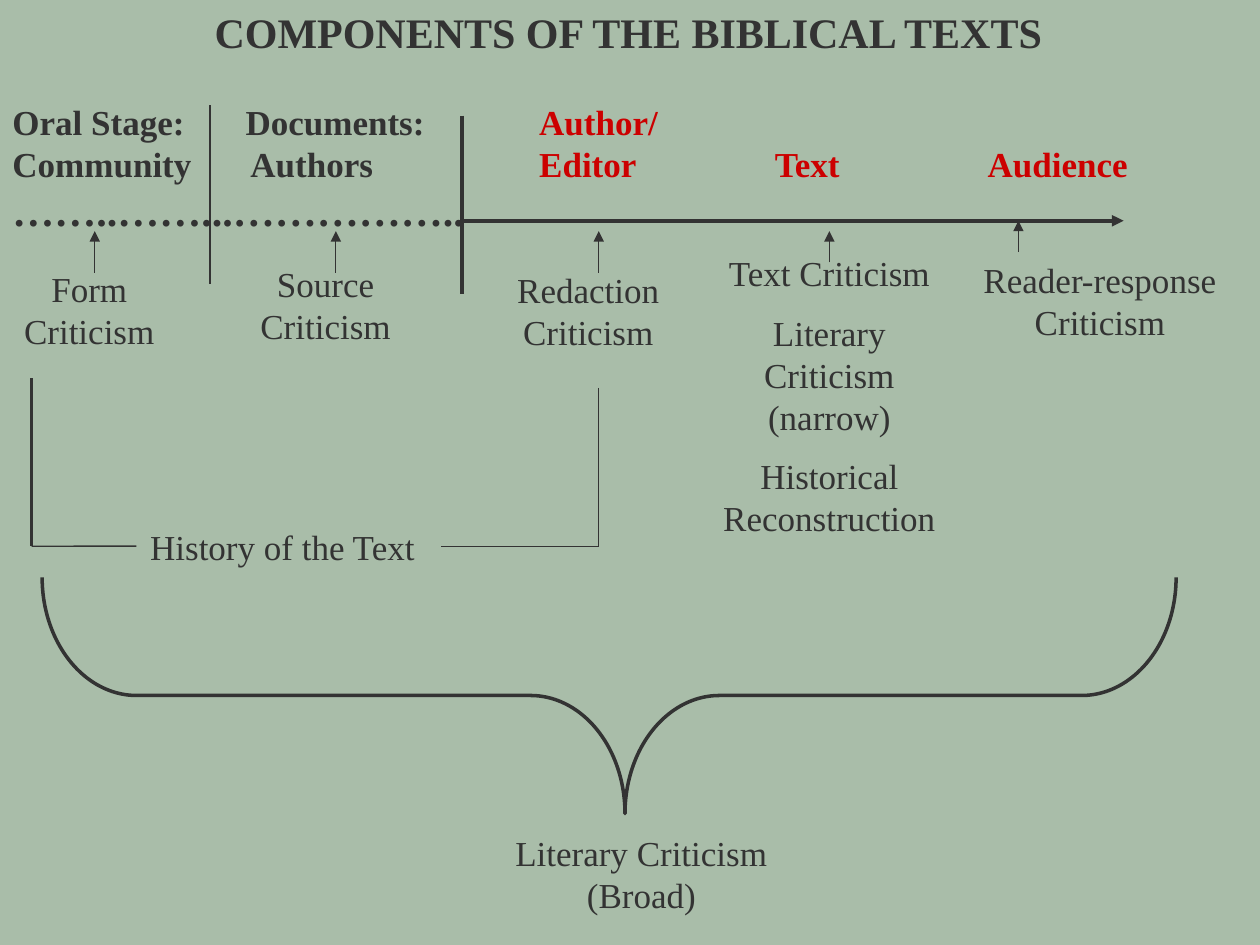
from pptx import Presentation
from pptx.dml.color import RGBColor
from pptx.enum.shapes import MSO_CONNECTOR as Connector, MSO_SHAPE as Shape
from pptx.enum.text import MSO_ANCHOR as Anchor, MSO_AUTO_SIZE as AutoSize, PP_ALIGN as Align
from pptx.oxml.ns import qn
from pptx.util import Cm, Pt
from lxml.etree import SubElement

INK, RED, SAGE = "333333", "CC0000", "A9BDA9"


def color(hex_text):
    return RGBColor.from_string(hex_text)


def write(frame, paragraphs, size=20, bold=False, align=Align.CENTER,
          anchor=Anchor.MIDDLE, wrap=True, tabs=()):
    """Fill a frame; each paragraph is a list of (text, colour) runs, tabs has stops in cm for each."""
    frame.word_wrap = wrap
    frame.auto_size = AutoSize.NONE
    frame.vertical_anchor = anchor
    for index, runs in enumerate(paragraphs):
        paragraph = frame.paragraphs[0] if index == 0 else frame.add_paragraph()
        paragraph.alignment = align
        if index and not tabs:
            paragraph.space_before = Pt(size / 2)
        if tabs and tabs[index]:
            tab_list = SubElement(paragraph._p.get_or_add_pPr(), qn("a:tabLst"))
            for stop in tabs[index]:
                SubElement(tab_list, qn("a:tab"), pos=str(int(Cm(stop))), algn="l")
        for text, run_color in runs:
            run = paragraph.add_run()
            run.text = text
            font = run.font
            font.name, font.size, font.bold = "Times New Roman", Pt(size), bold
            font.color.rgb = color(run_color)


class Diagram:
    def __init__(self, slide, ink=INK):
        self.slide = slide
        self.ink = ink

    def background(self, fill):
        self.slide.background.fill.solid()
        self.slide.background.fill.fore_color.rgb = color(fill)

    def title(self, text, left, top, width, height):
        title = self.slide.shapes.title
        title.left, title.top, title.width, title.height = map(Cm, (left, top, width, height))
        write(title.text_frame, [[(text, self.ink)]], size=24, bold=True, wrap=False)

    def text_box(self, left, top, width, height):
        return self.slide.shapes.add_textbox(*map(Cm, (left, top, width, height)))

    def label(self, lines, left, top, width, height, wrap=True):
        box = self.text_box(left, top, width, height)
        write(box.text_frame, [[(line, self.ink)] for line in lines], wrap=wrap)
        return box

    def line(self, x1, y1, x2, y2, width=0.75, arrow=False):
        connector = self.slide.shapes.add_connector(Connector.STRAIGHT, *map(Cm, (x1, y1, x2, y2)))
        connector.line.color.rgb = color(self.ink)
        connector.line.width = Pt(width)
        if arrow:
            SubElement(connector.line._get_or_add_ln(), qn("a:tailEnd"), type="triangle")
        SubElement(connector._element.spPr, qn("a:effectLst"))
        return connector

    def brace(self, left, top, width, height):
        brace = self.slide.shapes.add_shape(Shape.LEFT_BRACE, *map(Cm, (left, top, width, height)))
        brace.rotation = 270
        brace.adjustments[0], brace.adjustments[1] = 0.4, 0.514
        brace.shadow.inherit = False
        brace.fill.background()
        brace.line.color.rgb = color(self.ink)
        brace.line.width = Pt(2)


def main():
    presentation = Presentation()
    presentation.slide_width, presentation.slide_height = Cm(25.4), Cm(19.05)
    diagram = Diagram(presentation.slides.add_slide(presentation.slide_layouts[5]))
    diagram.background(SAGE)
    diagram.title("COMPONENTS OF THE BIBLICAL TEXTS", 4.02, 0, 17.3, 1.28)

    # Stage headings, with the dotted part of the timeline below them
    heading = diagram.text_box(0, 1.9, 25.4, 2.97).text_frame
    heading_format = dict(bold=True, align=Align.LEFT, anchor=Anchor.TOP)
    write(heading, [
        [("Oral Stage:\tDocuments:\t", INK), ("Author/", RED)],
        [("Community\tAuthors\t", INK), ("Editor\tText\tAudience", RED)],
    ], tabs=[(4.7, 10.62), (4.8, 10.62, 15.37, 19.66)], **heading_format)
    dots = heading.add_paragraph().add_run()
    dots.text = "……..……...…………….."
    dots.font.name, dots.font.size, dots.font.bold = "Times New Roman", Pt(24), True
    dots.font.color.rgb = color(INK)

    # Timeline and stage dividers
    timeline_y, editor_x = 4.45, 9.31
    diagram.line(editor_x, timeline_y, 22.65, timeline_y, width=2.25, arrow=True)
    diagram.line(4.23, 2.12, 4.23, 5.72, width=1.5)
    diagram.line(editor_x, 2.33, editor_x, 5.93, width=2)

    # Arrows from each criticism up to the timeline
    form_x, redaction_x = 1.91, 12.07
    for x, start, end in [(form_x, 5.5, 4.66), (6.77, 5.5, 4.66), (redaction_x, 5.5, 4.66),
                          (16.72, 5.29, 4.66), (20.53, 5.08, timeline_y)]:
        diagram.line(x, start, x, end, arrow=True)

    for lines, left, top, width, height in [
        (["Form Criticism"], 0, 5.26, 3.6, 1.96),
        (["Source Criticism"], 4.04, 5.16, 5.05, 1.96),
        (["Redaction Criticism"], 9.31, 5.28, 5.1, 1.96),
        (["Text Criticism", "Literary Criticism (narrow)", "Historical Reconstruction"],
         14.18, 4.88, 5.08, 6.17),
        (["Reader-response Criticism"], 18.95, 5.08, 6.45, 1.96),
        (["Literary Criticism (Broad)"], 8.97, 17.07, 7.92, 1.08),
    ]:
        diagram.label(lines, left, top, width, height)

    # Bracket for the history of the text
    bracket_left, bracket_y = 0.64, 11.01
    history = diagram.label(["History of the Text"], 2.75, bracket_y - 0.54, 5.89, 1.08, wrap=False)
    diagram.line(bracket_left, 7.62, bracket_left, bracket_y, width=1.5)
    diagram.line(redaction_x, 7.82, redaction_x, bracket_y)
    diagram.line(bracket_left, bracket_y, 2.75, bracket_y).end_connect(history, 1)
    diagram.line(redaction_x, bracket_y, 8.89, bracket_y)

    diagram.brace(9.9, 2.59, 4.76, 22.86)
    presentation.save("out.pptx")


if __name__ == "__main__":
    main()
